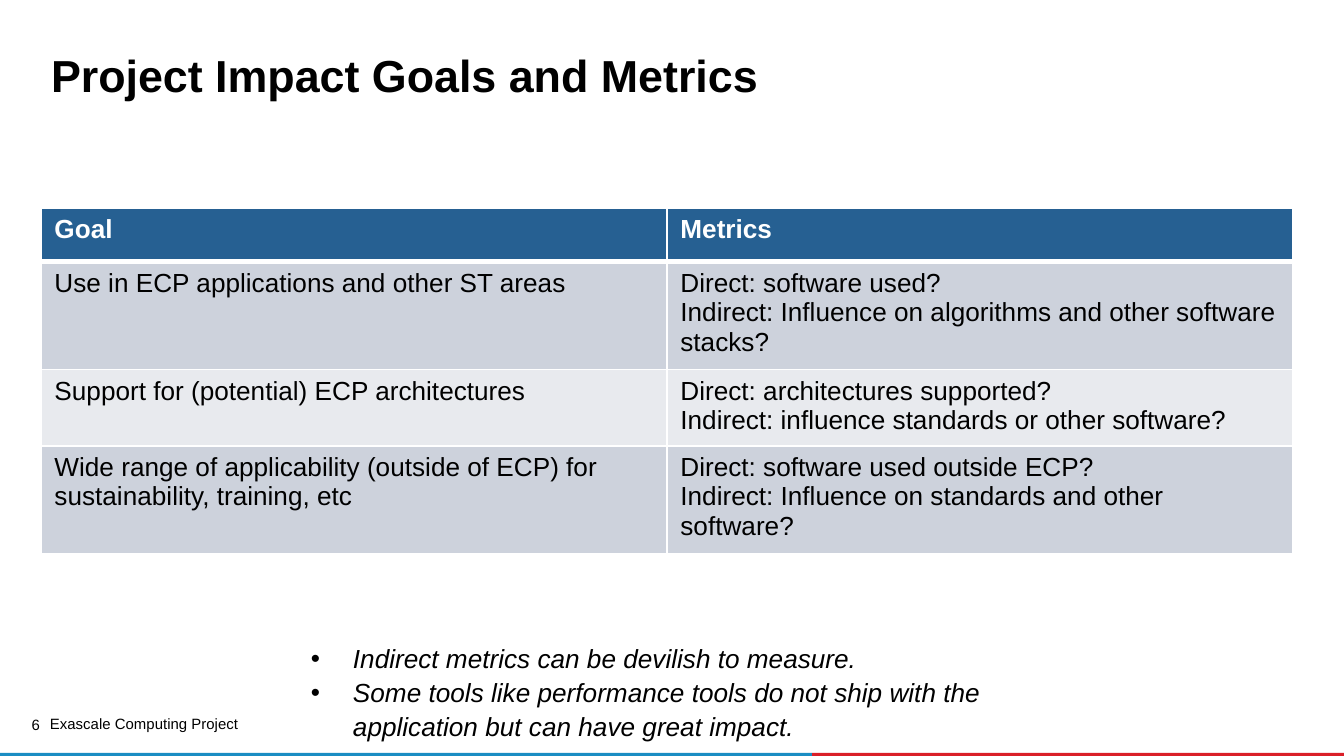
import pptx
import pptx.dml.color
import pptx.enum.shapes
import pptx.enum.text
import pptx.oxml
import pptx.oxml.ns
import pptx.util

TITLE = "Project Impact Goals and Metrics"
HEADER = ("Goal", "Metrics")
GOALS = [
    ("Use in ECP applications and other ST areas",
     "Direct: software used?\n"
     "Indirect: Influence on algorithms and other software stacks?"),
    ("Support for (potential) ECP architectures",
     "Direct: architectures supported?\n"
     "Indirect: influence standards or other software?"),
    ("Wide range of applicability (outside of ECP) for sustainability, training, etc",
     "Direct: software used outside ECP?\n"
     "Indirect: Influence on standards and other software?"),
]
REMARKS = [
    "Indirect metrics can be devilish to measure.",
    "Some tools like performance tools do not ship with the application "
    "but can have great impact.",
]
PAGE_NUMBER = "6"
FOOTER = "Exascale Computing Project"

WIDTH, HEIGHT = 1344, 756
TABLE_LEFT, TABLE_TOP, COLUMN_WIDTH = 41, 208, 626
ROW_HEIGHTS = (54, 101, 72, 101)
BAR_TOP, BAR_SPLIT = 753, 812
BULLET_INDENT = 42

BLACK, WHITE = "000000", "FFFFFF"
HEADER_FILL = "266092"
BAND_FILLS = ("CDD2DC", "E8EAEE")
BLUE, RED = "1A8DC3", "DA1F28"

ALIGN = pptx.enum.text.PP_ALIGN
ANCHOR = pptx.enum.text.MSO_ANCHOR


def px(n):
    return round(n * 9144000 / WIDTH)


def rgb(color):
    return pptx.dml.color.RGBColor.from_string(color)


def xml(markup):
    return pptx.oxml.parse_xml(markup.replace(" ", f' {pptx.oxml.ns.nsdecls("a")} ', 1))


def format_text(tf, size, color=BLACK, bold=False, italic=False):
    for p in tf.paragraphs:
        for r in p.runs:
            r.font.name = "Arial"
            r.font.size = pptx.util.Pt(size)
            r.font.color.rgb = rgb(color)
            r.font.bold = bold
            r.font.italic = italic


def add_text(slide, text, box, size, margins=(13, 7), anchor=ANCHOR.TOP,
             align=ALIGN.LEFT, spacing=None, **style):
    """Add a text box; margins are (horizontal, vertical) in px."""
    tf = slide.shapes.add_textbox(*map(px, box)).text_frame
    tf.word_wrap = True
    tf.margin_left = tf.margin_right = px(margins[0])
    tf.margin_top = tf.margin_bottom = px(margins[1])
    tf.vertical_anchor = anchor
    tf.text = text
    for p in tf.paragraphs:
        p.alignment = align
        p.line_spacing = spacing
    format_text(tf, size, **style)
    return tf


def add_bar(slide, left, right, color):
    sp = slide.shapes.add_shape(pptx.enum.shapes.MSO_SHAPE.RECTANGLE,
                                px(left), px(BAR_TOP),
                                px(right - left), px(HEIGHT - BAR_TOP))
    sp.shadow.inherit = False
    sp.fill.solid()
    sp.fill.fore_color.rgb = rgb(color)
    sp.line.fill.background()


def set_borders(cell, widths):
    """Draw white borders; widths maps the sides L, R, T, B to points."""
    for side, width in widths.items():
        cell._tc.get_or_add_tcPr().append(xml(
            f'<a:ln{side} w="{pptx.util.Pt(width)}"><a:solidFill>'
            f'<a:srgbClr val="{WHITE}"/></a:solidFill></a:ln{side}>'))


def add_goal_table(slide):
    rows = [HEADER] + GOALS
    table = slide.shapes.add_table(
        len(rows), len(HEADER), px(TABLE_LEFT), px(TABLE_TOP),
        px(COLUMN_WIDTH * len(HEADER)), px(sum(ROW_HEIGHTS))).table
    for column in table.columns:
        column.width = px(COLUMN_WIDTH)
    for i, (texts, height) in enumerate(zip(rows, ROW_HEIGHTS)):
        table.rows[i].height = px(height)
        is_header = i == 0
        for j, text in enumerate(texts):
            cell = table.cell(i, j)
            cell.text = text
            format_text(cell.text_frame, 14, WHITE if is_header else BLACK, is_header)
            set_borders(cell, {"L": 1, "R": 1, "T": 3 if i == 1 else 1,
                               "B": 3 if is_header else 1})
            cell.fill.solid()
            cell.fill.fore_color.rgb = rgb(
                HEADER_FILL if is_header else BAND_FILLS[(i - 1) % 2])


def add_bullets(tf):
    for p in tf.paragraphs:
        pPr = p._p.get_or_add_pPr()
        pPr.set("marL", str(px(BULLET_INDENT)))
        pPr.set("indent", str(-px(BULLET_INDENT)))
        pPr.append(xml('<a:buFont typeface="Arial"/>'))
        pPr.append(xml('<a:buChar char="•"/>'))


def main():
    prs = pptx.Presentation()
    prs.slide_width, prs.slide_height = px(WIDTH), px(HEIGHT)
    slide = prs.slides.add_slide(prs.slide_layouts[6])

    add_bar(slide, BAR_SPLIT, WIDTH, RED)
    add_bar(slide, 0, BAR_SPLIT, BLUE)
    add_text(slide, PAGE_NUMBER, (17, 718, 23, 16), 8, margins=(0, 0),
             align=ALIGN.RIGHT, spacing=0.9)
    add_text(slide, FOOTER, (40, 714, 320, 20), 8, margins=(10, 5),
             anchor=ANCHOR.MIDDLE)
    add_text(slide, TITLE, (41, 46, 1254, 56), 24, margins=(10, 10),
             spacing=0.85, bold=True)
    add_goal_table(slide)
    add_bullets(add_text(slide, "\n".join(REMARKS), (298, 633, 736, 109), 14,
                         spacing=1.08, italic=True))
    prs.save("out.pptx")


if __name__ == "__main__":
    main()
